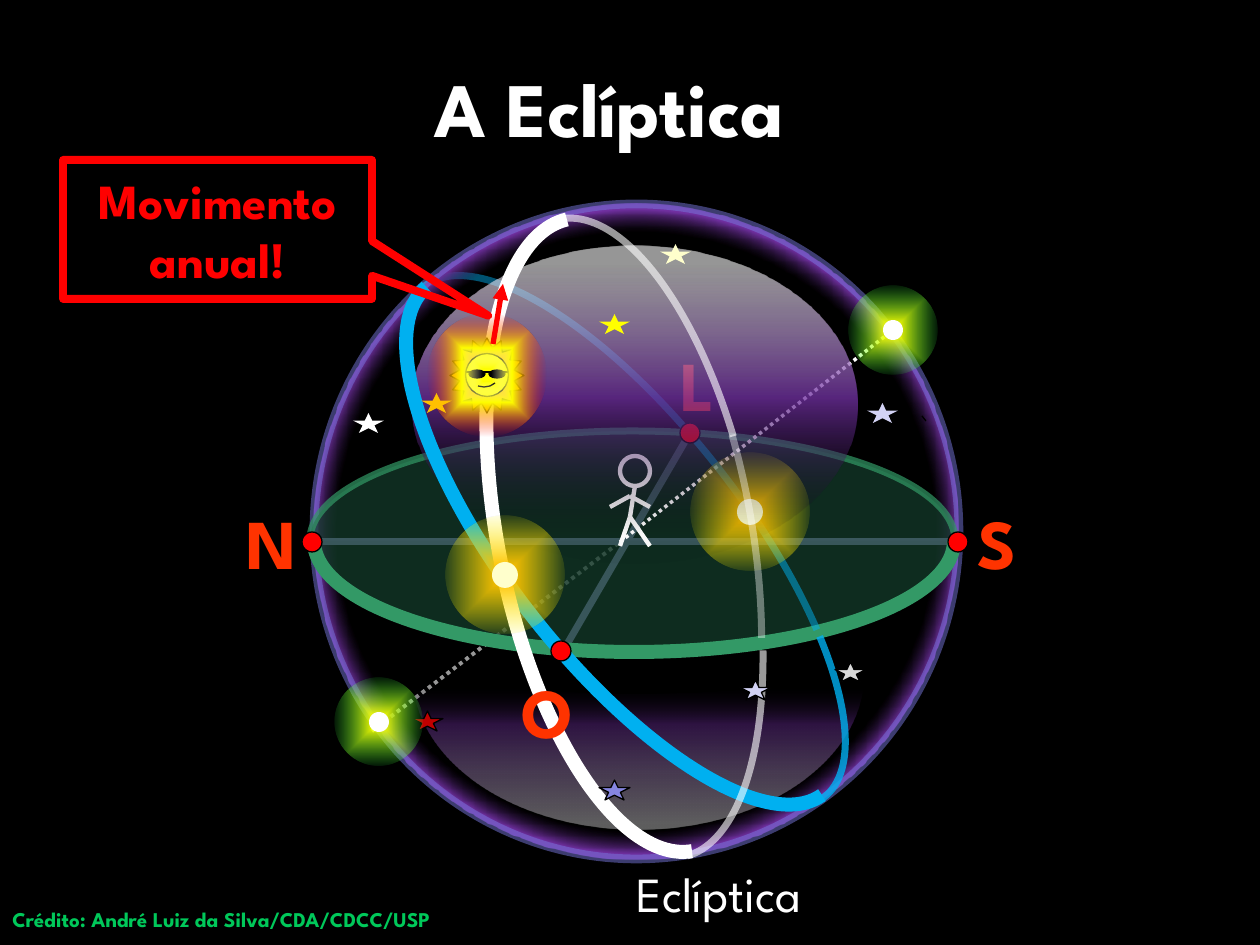
import pptx
import pptx.util
import pptx.dml.color
import pptx.enum.dml
import pptx.enum.shapes
import pptx.enum.text
import pptx.oxml
import pptx.oxml.ns

RGB = pptx.dml.color.RGBColor
SHAPE = pptx.enum.shapes.MSO_SHAPE
ALIGN = pptx.enum.text.PP_ALIGN
ANCHOR = pptx.enum.text.MSO_ANCHOR
qn = pptx.oxml.ns.qn

PX = 914400 // 126
FONT = "League Spartan"

BLACK, WHITE = RGB(0, 0, 0), RGB(255, 255, 255)
RED, ORANGE = RGB(255, 0, 0), RGB(255, 51, 0)
YELLOW, GOLD = RGB(255, 255, 0), RGB(255, 192, 0)
CREAM, DARK_RED = RGB(255, 255, 204), RGB(192, 0, 0)
LIME, CREDIT_GREEN = RGB(33, 255, 70), RGB(0, 200, 90)
PURPLE, RIM = RGB(112, 48, 160), RGB(120, 120, 222)
LAVENDER, AXIS = RGB(210, 210, 244), RGB(165, 165, 233)
PERIWINKLE, GREY = RGB(133, 133, 224), RGB(217, 217, 217)
BLUE = RGB(0, 176, 240)
HORIZON, GROUND = RGB(51, 153, 102), RGB(20, 60, 43)

# Gradient stops: position %, colour, opacity %
SPHERE = [(65, BLACK, 40), (70, PURPLE, 100)]
LOWER_BOWL = [(3, WHITE, 37), (68, PURPLE, 41), (94, BLACK, 0)]
UPPER_DOME = [(6, WHITE, 58), (48, PURPLE, 77), (91, BLACK, 2)]
SUNSHINE = [(7, WHITE, 0), (42, YELLOW, 100), (100, RED, 0)]
EQUINOX = [(7, GOLD, 100), (79, YELLOW, 0)]
POLE = [(7, YELLOW, 100), (77, LIME, 2)]

# Arcs: box, rotation, start and end degrees, colour, points, opacity %
EQUATOR_BEHIND = ((503, 218, 239, 644), 142.1, 90, 157.9, BLUE, 4, 80)
EQUATOR_FAR = ((508, 221, 237, 644), 142.1, 162.2, 242.4, BLUE, 4, 50)
EQUATOR_FAR_END = ((508, 221, 237, 644), 142.1, 243.7, 270.2, BLUE, 4, 80)
EQUATOR_NEAR = ((505, 218, 241, 644), 142.1, 270.3, 89.7, BLUE, 8, 100)
ECLIPTIC = [
    ((491, 214, 261, 644), 170, 147.5, 226, WHITE, 4, 38),
    ((490, 219, 261, 644), 168.8, 228.7, 269.2, WHITE, 4, 60),
    ((489, 213, 265, 644), 168.8, 90, 149.8, WHITE, 4, 60),
    ((498, 213, 266, 644), 168.8, 270.3, 89.7, WHITE, 8, 100),
]
HORIZON_NEAR = ((314, 430, 640, 222), 0, 0, 180, HORIZON, 8, 100)

FIGURE_LIMBS = [((635, 486), (630, 517)), ((630, 517), (650, 546)),
                ((630, 517), (620, 546)), ((630, 496), (650, 507)),
                ((610, 507), (630, 496))]
STARS = [(740, 680, LAVENDER, True), (412, 711, DARK_RED, True),
         (599, 780, PERIWINKLE, True), (835, 662, GREY, True),
         (867, 403, LAVENDER, False), (421, 393, GOLD, False),
         (353, 413, WHITE, False), (599, 314, YELLOW, False),
         (660, 244, CREAM, False)]
CARDINALS = [("N", 234, 493), ("L", 668, 335), ("S", 965, 493)]

presentation = pptx.Presentation()
presentation.slide_width = 1260 * PX
presentation.slide_height = 945 * PX
slide = presentation.slides.add_slide(presentation.slide_layouts[5])
slide.background.fill.solid()
slide.background.fill.fore_color.rgb = BLACK


def scaled(*lengths):
    return [round(length * PX) for length in lengths]


def set_opacity(color_element, percent):
    if percent < 100:
        alpha = pptx.oxml.parse_xml(
            f'<a:alpha {pptx.oxml.ns.nsdecls("a")} val="{percent * 1000}"/>')
        color_element.append(alpha)


def style_line(shape, color, points, opacity=100):
    shape.line.color.rgb = color
    shape.line.width = pptx.util.Pt(points)
    outline = shape.element.spPr.find(qn("a:ln"))
    set_opacity(outline.find(".//" + qn("a:srgbClr")), opacity)


def add_shape(kind, box, fill=None, fill_opacity=100, line=None, rotation=0,
              adjustments=()):
    """Add a preset shape; line is (colour, points[, opacity])."""
    shape = slide.shapes.add_shape(kind, *scaled(*box))
    shape.shadow.inherit = False
    shape.rotation = rotation
    for index, value in enumerate(adjustments):
        shape.adjustments[index] = value
    if fill is None:
        shape.fill.background()
    else:
        shape.fill.solid()
        shape.fill.fore_color.rgb = fill
        color_element = shape.element.spPr.find(qn("a:solidFill"))[0]
        set_opacity(color_element, fill_opacity)
    if line:
        style_line(shape, *line)
    else:
        shape.line.fill.background()
    return shape


def set_gradient(shape, stops, path=None, angle=0):
    """Fill along a path from the centre, or linearly at an angle in degrees."""
    stop_xml = "".join(
        f'<a:gs pos="{position * 1000}"><a:srgbClr val="{color}">'
        f'<a:alpha val="{opacity * 1000}"/></a:srgbClr></a:gs>'
        for position, color, opacity in stops)
    if path:
        direction = (f'<a:path path="{path}"><a:fillToRect l="50000" t="50000" '
                     'r="50000" b="50000"/></a:path>')
    else:
        direction = f'<a:lin ang="{angle * 60000}" scaled="0"/>'
    gradient = pptx.oxml.parse_xml(
        f'<a:gradFill {pptx.oxml.ns.nsdecls("a")} rotWithShape="1">'
        f'<a:gsLst>{stop_xml}</a:gsLst>{direction}</a:gradFill>')
    properties = shape.element.spPr
    properties.replace(properties.find(qn("a:noFill")), gradient)


def add_arc(box, rotation, start, end, color, points, opacity, **fill):
    # The library scales arc angles by 100000, the format by 60000 per degree
    return add_shape(SHAPE.ARC, box, rotation=rotation,
                     adjustments=(start * 0.6, end * 0.6),
                     line=(color, points, opacity), **fill)


def add_disc(x, y, radius, **style):
    box = (x - radius, y - radius, 2 * radius, 2 * radius)
    return add_shape(SHAPE.OVAL, box, **style)


def add_glow(x, y, radius, stops, core_radius, core_color):
    set_gradient(add_disc(x, y, radius, rotation=305.7), stops, "shape")
    add_disc(x, y, core_radius, fill=core_color)


def add_line(start, end, color, points, dotted=False, arrow=False):
    line = slide.shapes.add_connector(
        pptx.enum.shapes.MSO_CONNECTOR.STRAIGHT, *scaled(*start, *end))
    style_line(line, color, points)
    if dotted:
        line.line.dash_style = pptx.enum.dml.MSO_LINE.ROUND_DOT
    properties = line.element.spPr
    if arrow:
        properties.find(qn("a:ln")).append(pptx.oxml.parse_xml(
            f'<a:tailEnd {pptx.oxml.ns.nsdecls("a")} type="triangle"/>'))
    properties.append(pptx.oxml.parse_xml(
        f'<a:effectLst {pptx.oxml.ns.nsdecls("a")}/>'))


def set_text(shape, text, points, color, bold=True, align=ALIGN.LEFT,
             anchor=ANCHOR.TOP, wrap=True):
    frame = shape.text_frame
    frame.text = text
    frame.word_wrap = wrap
    frame.vertical_anchor = anchor
    paragraph = frame.paragraphs[0]
    paragraph.alignment = align
    font = paragraph.runs[0].font
    font.name, font.size, font.bold = FONT, pptx.util.Pt(points), bold
    font.color.rgb = color


def add_text(box, text, points, color, **style):
    set_text(slide.shapes.add_textbox(*scaled(*box)), text, points, color, **style)


def add_cardinal(letter, x, y):
    add_text((x, y, 49, 97), letter, 40, ORANGE, wrap=False)


def add_cardinal_dot(x, y):
    add_disc(x, y, 10, fill=RED, line=(BLACK, 0.75))


title = slide.shapes.title
title.left, title.top, title.width, title.height = scaled(74, 28, 1071, 157)
set_text(title, "A Eclíptica", 44, WHITE, align=ALIGN.CENTER, anchor=ANCHOR.MIDDLE)

# Celestial sphere and horizon
add_arc(*EQUATOR_BEHIND)
add_line((372, 731), (620, 542), WHITE, 2.25, dotted=True)
sphere = add_shape(SHAPE.OVAL, (314, 204, 645, 655), line=(RIM, 5, 50))
set_gradient(sphere, SPHERE, "circle")
add_line((562, 653), (690, 433), AXIS, 4)
add_line((312, 542), (958, 542), AXIS, 4)
add_shape(SHAPE.OVAL, (310, 431, 645, 218), fill=GROUND, fill_opacity=73,
          line=(HORIZON, 4, 70))
for cardinal in CARDINALS:
    add_cardinal(*cardinal)
add_line((926, 421), (922, 416), BLACK, 0.75)
add_arc(*HORIZON_NEAR, fill=GROUND, fill_opacity=7)
add_line((620, 542), (888, 334), WHITE, 2, dotted=True)
add_arc(*EQUATOR_FAR)

# Observer
add_disc(635, 471, 15, line=(WHITE, 2.5))
for limb in FIGURE_LIMBS:
    add_line(*limb, WHITE, 2.5)

add_glow(750, 512, 59, EQUINOX, 13, CREAM)
for dot in [(690, 433), (312, 542), (958, 542)]:
    add_cardinal_dot(*dot)
bowl = add_shape(SHAPE.MOON, (561, 527, 155, 451), rotation=270, adjustments=(0.875,))
set_gradient(bowl, LOWER_BOWL)
add_text((481, 857, 476, 72), "Eclíptica", 28, WHITE, bold=False, align=ALIGN.CENTER)
add_arc(*EQUATOR_FAR_END)
dome = add_shape(SHAPE.OVAL, (412, 246, 446, 318))
set_gradient(dome, UPPER_DOME, angle=90)
add_arc(*EQUATOR_NEAR)
add_cardinal_dot(561, 651)
for arc in ECLIPTIC:
    add_arc(*arc)

# Sun with sunglasses
thin_black = (BLACK, 0.75)
add_shape(SHAPE.STAR_16_POINT, (450, 338, 74, 75), fill=GOLD, line=thin_black,
          adjustments=(0.375,))
add_disc(487, 375, 21.5, fill=YELLOW, line=thin_black)
smile = slide.shapes.build_freeform(478, 386, scale=PX)
smile.add_line_segments([(484, 387), (490, 386), (495, 383)], close=False)
smile_shape = smile.convert_to_shape()
smile_shape.shadow.inherit = False
smile_shape.fill.background()
style_line(smile_shape, *thin_black)
for lens_left in (469, 489):
    add_shape(SHAPE.OVAL, (lens_left, 370, 16, 8), fill=BLACK, line=thin_black)
add_line((465, 372), (509, 372), *thin_black)
set_gradient(add_shape(SHAPE.OVAL, (427, 314, 119, 123)), SUNSHINE, "shape")

# Yearly movement
add_cardinal("O", 509, 662)
add_line((493, 344), (503, 284), RED, 3, arrow=True)
callout = add_shape(SHAPE.RECTANGULAR_CALLOUT, (63, 160, 309, 139),
                    line=(RED, 4.5), adjustments=(0.876, 0.62))
set_text(callout, "Movimento anual!", 28, RED, align=ALIGN.CENTER, anchor=ANCHOR.MIDDLE)

for x, y, color, outlined in STARS:
    add_shape(SHAPE.STAR_5_POINT, (x, y, 31, 20), fill=color,
              line=thin_black if outlined else None)
add_text((0, 900, 1295, 38), "Crédito: André Luiz da Silva/CDA/CDCC/USP", 12,
         CREDIT_GREEN)
for x, y in [(379, 722), (893, 330)]:
    add_glow(x, y, 44, POLE, 10, WHITE)
add_glow(505, 575, 59, EQUINOX, 13, CREAM)

presentation.save("out.pptx")
